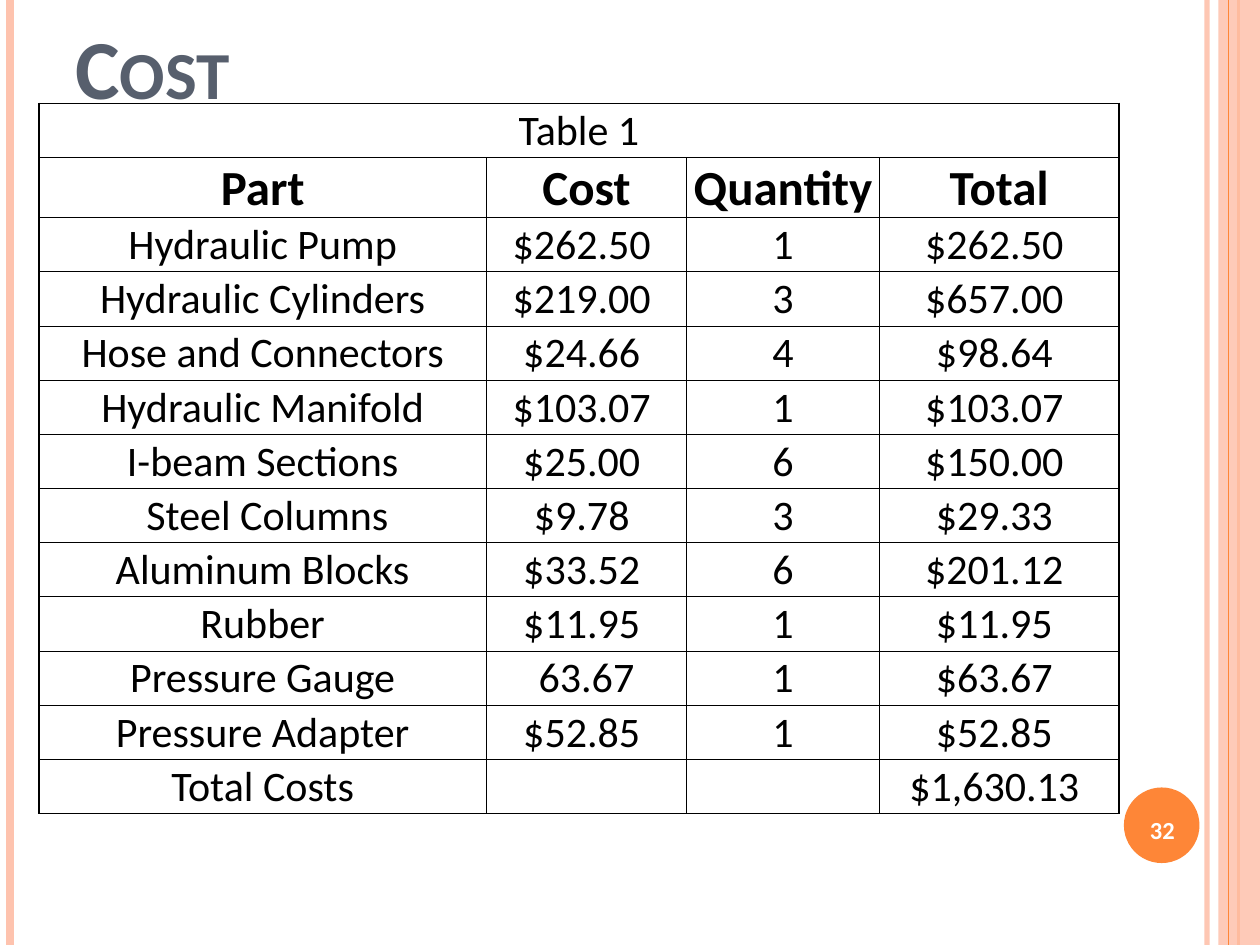
from lxml import etree
from pptx import Presentation
from pptx.dml.color import RGBColor
from pptx.enum.shapes import MSO_CONNECTOR, MSO_SHAPE
from pptx.enum.text import MSO_ANCHOR, PP_ALIGN
from pptx.oxml.ns import qn
from pptx.util import Inches, Pt

MID, BOTTOM = MSO_ANCHOR.MIDDLE, MSO_ANCHOR.BOTTOM
LEFT, CENTER = PP_ALIGN.LEFT, PP_ALIGN.CENTER
RECT, OVAL = MSO_SHAPE.RECTANGLE, MSO_SHAPE.OVAL
STRAIGHT = MSO_CONNECTOR.STRAIGHT
WIDE, HIGH = 10, 7.5
PINK, ORANGE, SLATE = "FEC3AE", "FE8637", "575F6D"
BLACK, WHITE = "000000", "FFFFFF"
BODY = {"name": "Calibri", "size": Pt(24), "bold": False}
HEAD = {**BODY, "size": Pt(28), "bold": True}
TITLE = {**HEAD, "size": Pt(48)}
BADGE = {**HEAD, "size": Pt(14)}
COLS = [3.55, 1.59, 1.53, 1.9]
ROW = 0.43
THIN, THICK = 0.5, 1
PARTS = [
    ("Hydraulic Pump", "$262.50 ", "1", "$262.50 "),
    ("Hydraulic Cylinders", "$219.00 ", "3", "$657.00 "),
    ("Hose and Connectors", "$24.66 ", "4", "$98.64 "),
    ("Hydraulic Manifold", "$103.07 ", "1", "$103.07 "),
    ("I-beam Sections", "$25.00 ", "6", "$150.00 "),
    (" Steel Columns", "$9.78 ", "3", "$29.33 "),
    ("Aluminum Blocks", "$33.52 ", "6", "$201.12 "),
    ("Rubber", "$11.95 ", "1", "$11.95 "),
    ("Pressure Gauge", "63.67", "1", "$63.67 "),
    ("Pressure Adapter", "$52.85 ", "1", "$52.85 "),
]
ROWS = [
    ("Table 1", "", "", ""),
    ("Part", "Cost", "Quantity", "Total"),
    *PARTS,
    ("Total Costs", "", "", "$1,630.13 "),
]


def paint(color, tone):
    color.rgb = RGBColor.from_string(tone)


def fade(color_fill, share):
    tone = color_fill.find(".//" + qn("a:srgbClr"))
    etree.SubElement(tone, qn("a:alpha"), val=str(share * 1000))


def write(frame, text, look, tone, align):
    para = frame.paragraphs[0]
    para.alignment = align
    run = para.add_run()
    run.text = text
    for key, val in look.items():
        setattr(run.font, key, val)
    paint(run.font.color, tone)
    return run


def stripe(slide, x, tone, width, share=100):
    line = slide.shapes.add_connector(
        STRAIGHT, Inches(x), 0, Inches(x), Inches(HIGH))
    line.line.width = Pt(width)
    paint(line.line.color, tone)
    props = line._element.spPr
    etree.SubElement(props, qn("a:effectLst"))
    if share < 100:
        fade(props.find(qn("a:ln")), share)


def solid(slide, kind, box, tone, share=100):
    shape = slide.shapes.add_shape(kind, *map(Inches, box))
    shape.shadow.inherit = False
    shape.fill.solid()
    paint(shape.fill.fore_color, tone)
    shape.line.fill.background()
    if share < 100:
        fade(shape._element.spPr.find(qn("a:solidFill")), share)


def label(slide, box, text, look, tone, align, anchor):
    frame = slide.shapes.add_textbox(*map(Inches, box)).text_frame
    frame.word_wrap = True
    frame.vertical_anchor = anchor
    return write(frame, text, look, tone, align)


def border(cell, side, width):
    props = cell._tc.get_or_add_tcPr()
    line = etree.SubElement(props, qn("a:ln" + side), w=str(Pt(width)))
    fill = etree.SubElement(line, qn("a:solidFill"))
    etree.SubElement(fill, qn("a:srgbClr"), val=BLACK)


def style(cell, row, col):
    edges = {"L": col == 0, "R": col == len(COLS) - 1 or row == 0,
             "T": row == 0, "B": row == len(ROWS) - 1}
    for side, outer in edges.items():
        border(cell, side, THICK if outer else THIN)
    cell.fill.background()
    cell.vertical_anchor = MID
    cell.margin_left = cell.margin_right = cell.margin_top = Inches(0.01)
    cell.margin_bottom = 0


def costs(slide):
    frame = slide.shapes.add_table(
        len(ROWS), len(COLS), Inches(0.31), Inches(0.82),
        Inches(sum(COLS)), Inches(ROW * len(ROWS)))
    table = frame.table
    table.first_row = table.horz_banding = False
    for col, width in zip(table.columns, COLS):
        col.width = Inches(width)
    for r, texts in enumerate(ROWS):
        table.rows[r].height = Inches(ROW)
        for c, text in enumerate(texts):
            cell = table.cell(r, c)
            style(cell, r, c)
            write(cell.text_frame, text, HEAD if r == 1 else BODY,
                  BLACK, CENTER)
    table.cell(0, 0).merge(table.cell(0, len(COLS) - 1))


def main():
    deck = Presentation()
    deck.slide_width, deck.slide_height = Inches(WIDE), Inches(HIGH)
    slide = deck.slides.add_slide(deck.slide_layouts[6])
    stripe(slide, 9.58, PINK, 3, 93)
    stripe(slide, 0.08, PINK, 4.5)
    stripe(slide, 9.83, ORANGE, 1.5)
    solid(slide, RECT, (9.67, 0, 0.33, HIGH), PINK, 87)
    stripe(slide, 9.75, ORANGE, 0.75)
    solid(slide, OVAL, (8.92, 6.25, 0.6, 0.6), ORANGE)
    label(slide, (8.89, 6.3, 0.67, 0.57), "32", BADGE, WHITE, CENTER, MID)
    title = label(slide, (0.5, 0.25, 8.17, 0.72), "Cost", TITLE, SLATE,
                  LEFT, BOTTOM)
    title.font._element.set("cap", "small")
    costs(slide)
    deck.save("out.pptx")


if __name__ == "__main__":
    main()
